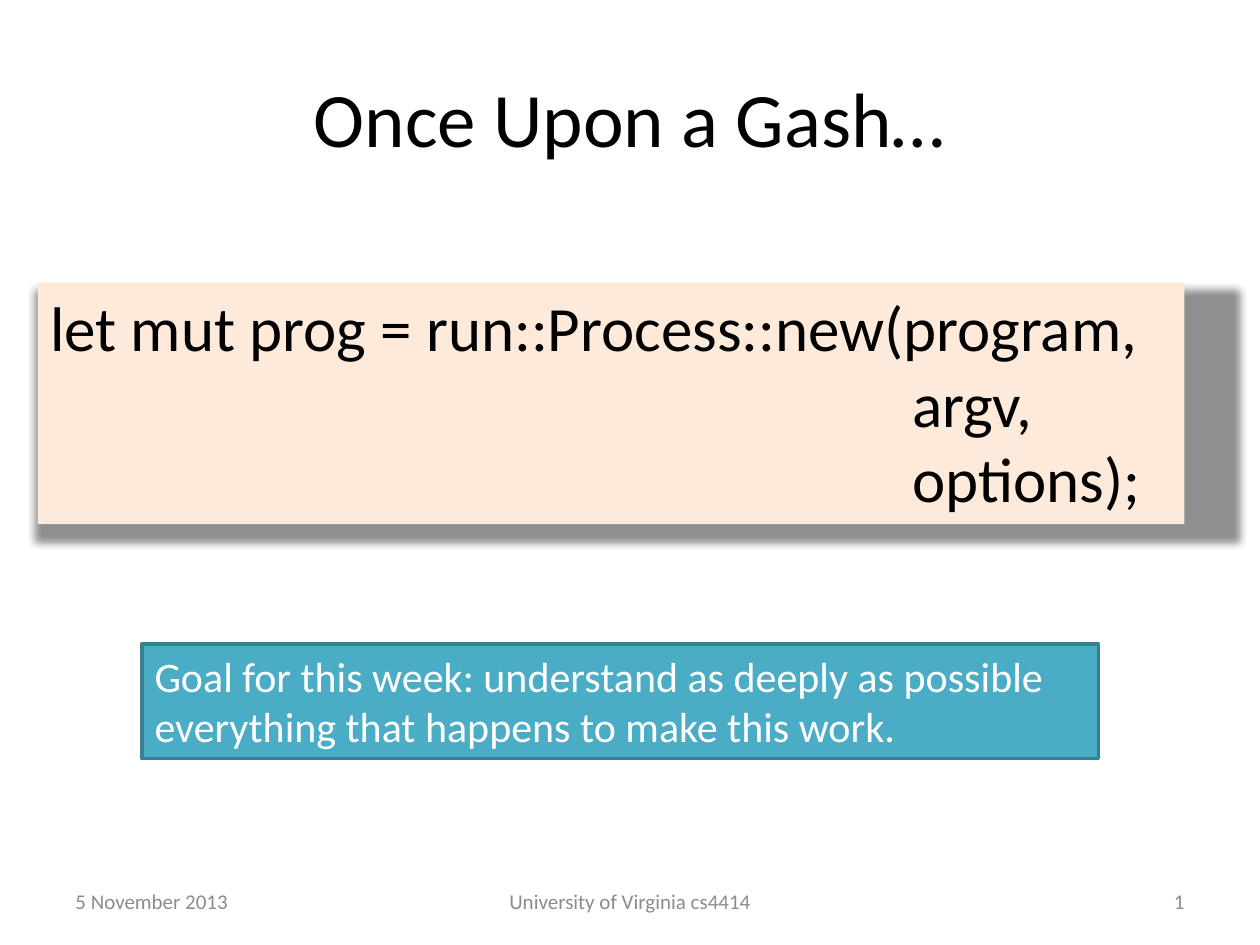
from lxml.etree import SubElement
from pptx import Presentation
from pptx.dml.color import RGBColor
from pptx.enum.shapes import MSO_SHAPE
from pptx.enum.text import MSO_ANCHOR, PP_ALIGN
from pptx.oxml.ns import qn
from pptx.util import Pt

SLIDE_SIZE = (720, 540)
FONT = "Calibri"
BLACK, GRAY, WHITE = "000000", "8C8C8C", "FFFFFF"
CODE_FILL, GOAL_FILL, GOAL_LINE = "FDEADA", "4BACC6", "377F92"
MARGIN = 36
FOOTER_TOP, FOOTER_HEIGHT = 500.5, 28.8
ARGUMENT_INDENT = 492.5

TITLE = "Once Upon a Gash…"
CODE_LINES = [
    ("let mut prog = run::Process::new(program,", 0),
    ("argv,", ARGUMENT_INDENT),
    ("options);", ARGUMENT_INDENT),
]
GOAL = ("Goal for this week: understand as deeply as possible "
        "everything that happens to make this work.")
FOOTERS = [
    ("5 November 2013", 168, PP_ALIGN.LEFT),
    ("University of Virginia cs4414", 228, PP_ALIGN.CENTER),
    ("1", 168, PP_ALIGN.RIGHT),
]


def color(value):
    return RGBColor.from_string(value)


def write(shape, lines, size, text_color, align=PP_ALIGN.LEFT, anchor=MSO_ANCHOR.MIDDLE):
    frame = shape.text_frame
    frame.word_wrap = True
    frame.vertical_anchor = anchor
    for index, (text, indent) in enumerate(lines):
        paragraph = frame.add_paragraph() if index else frame.paragraphs[0]
        paragraph.alignment = align
        if indent:
            paragraph._p.get_or_add_pPr().set("marL", str(Pt(indent)))
        run = paragraph.add_run()
        run.text = text
        run.font.name = FONT
        run.font.size = Pt(size)
        run.font.color.rgb = color(text_color)


def add_text(slide, box, text, size, text_color, align):
    shape = slide.shapes.add_textbox(*map(Pt, box))
    write(shape, [(text, 0)], size, text_color, align)


def add_panel(slide, box, fill, line=None):
    shape = slide.shapes.add_shape(MSO_SHAPE.RECTANGLE, *map(Pt, box))
    shape.shadow.inherit = False
    shape.fill.solid()
    shape.fill.fore_color.rgb = color(fill)
    if line:
        shape.line.color.rgb = color(line)
        shape.line.width = Pt(2)
    else:
        shape.line.fill.background()
    return shape


def add_shadow(shape):
    effects = shape._element.spPr.find(qn("a:effectLst"))
    shadow = SubElement(effects, qn("a:outerShdw"), blurRad=str(Pt(4)), dist=str(Pt(4)),
                        dir=str(112 * 60000), sx="105000", sy="105000",
                        algn="tl", rotWithShape="0")
    shade = SubElement(shadow, qn("a:srgbClr"), val=BLACK)
    SubElement(shade, qn("a:alpha"), val="43000")


def main():
    presentation = Presentation()
    presentation.slide_width, presentation.slide_height = map(Pt, SLIDE_SIZE)
    slide = presentation.slides.add_slide(presentation.slide_layouts[6])

    content_width = SLIDE_SIZE[0] - 2 * MARGIN
    add_text(slide, (MARGIN, 21.6, content_width, 90), TITLE, 44, BLACK, PP_ALIGN.CENTER)

    gap = (content_width - sum(width for _, width, _ in FOOTERS)) / (len(FOOTERS) - 1)
    left = MARGIN
    for text, width, align in FOOTERS:
        add_text(slide, (left, FOOTER_TOP, width, FOOTER_HEIGHT), text, 12, GRAY, align)
        left += width + gap

    code_panel = add_panel(slide, (21.6, 161.3, 655.2, 138.2), CODE_FILL)
    add_shadow(code_panel)
    write(code_panel, CODE_LINES, 36, BLACK, anchor=MSO_ANCHOR.TOP)

    goal_panel = add_panel(slide, (81.2, 367.9, 546.5, 65.5), GOAL_FILL, GOAL_LINE)
    write(goal_panel, [(GOAL, 0)], 24, WHITE, anchor=MSO_ANCHOR.TOP)

    presentation.save("out.pptx")


if __name__ == "__main__":
    main()
